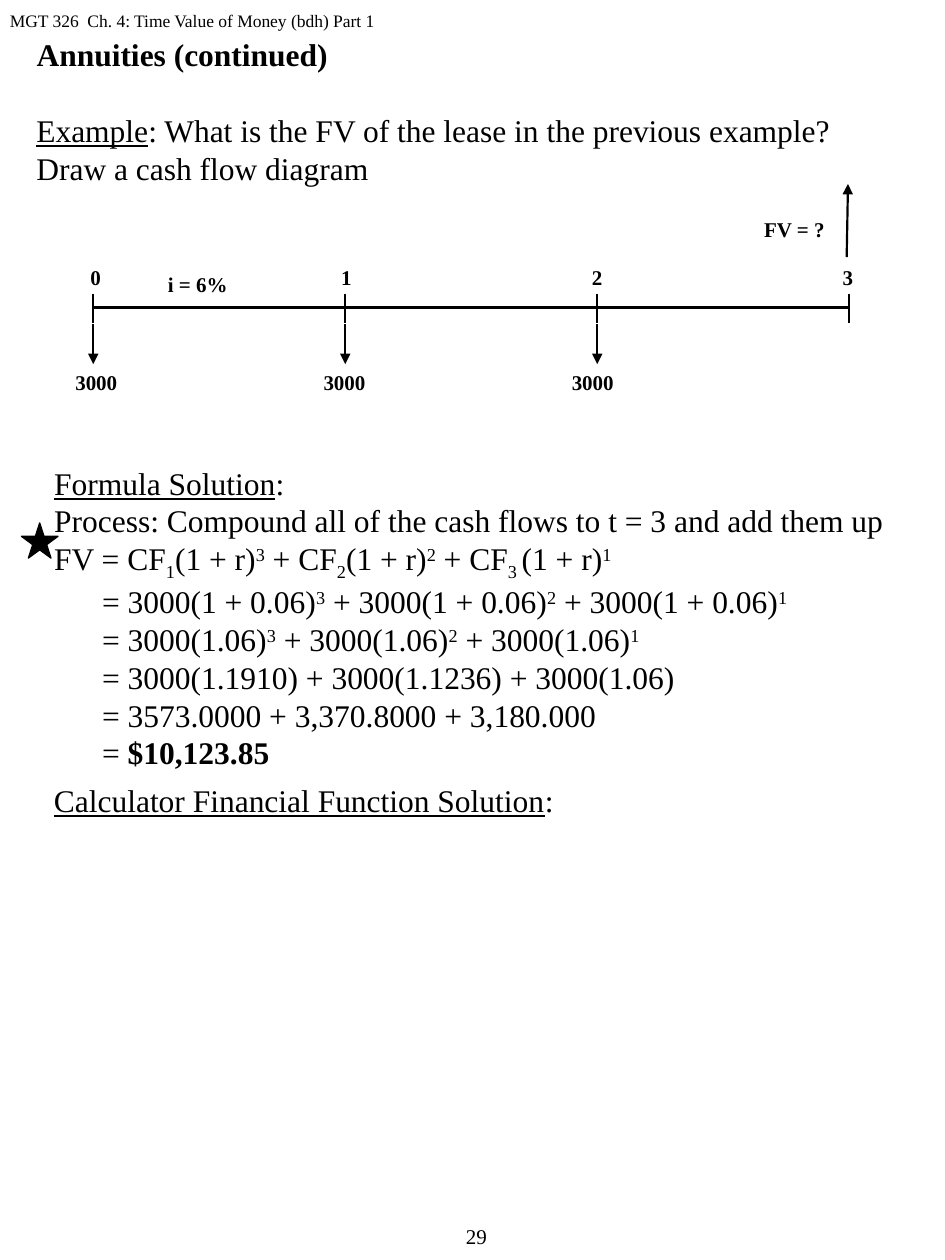
"""Build the slide on the future value of an annuity, with its cash flow diagram."""
from dataclasses import dataclass, field

from lxml import etree
from pptx import Presentation
from pptx.dml.color import RGBColor
from pptx.enum.shapes import MSO_CONNECTOR, MSO_SHAPE
from pptx.enum.text import MSO_ANCHOR, MSO_AUTO_SIZE, PP_ALIGN
from pptx.oxml.ns import qn
from pptx.util import Inches, Pt

LEFT, CENTER = PP_ALIGN.LEFT, PP_ALIGN.CENTER
TOP = MSO_ANCHOR.TOP
NO_AUTOSIZE = MSO_AUTO_SIZE.NONE
STRAIGHT = MSO_CONNECTOR.STRAIGHT
STAR = MSO_SHAPE.STAR_5_POINT
SUB, SUP = -25, 30


@dataclass(frozen=True)
class Theme:
    font: str = "Times New Roman"
    ink: RGBColor = field(default_factory=lambda: RGBColor(0, 0, 0))
    header: int = 10
    label: int = 12
    body: int = 18
    line: float = 1.25
    outline: float = 0.75


@dataclass(frozen=True)
class Run:
    text: str
    bold: bool = False
    underline: bool = False
    baseline: int = 0


@dataclass(frozen=True)
class Para:
    runs: list[Run]
    indent: float = 0


@dataclass(frozen=True)
class Box:
    left: float
    top: float
    width: float
    height: float

    def emu(self) -> list[int]:
        return [Inches(v) for v in (self.left, self.top, self.width, self.height)]


THEME = Theme()


def heading(text: str) -> list[Run]:
    return [Run(text, underline=True), Run(":")]


def power_sum(base: str) -> list[Run]:
    runs = []
    for n, lead in ((3, "= "), (2, " + "), (1, " + ")):
        runs += [Run(f"{lead}3000({base})"), Run(str(n), baseline=SUP)]
    return runs


def general_formula() -> list[Run]:
    runs = []
    for lead, index, power in (("FV = ", "1", "3"), (" + ", "2", "2"), (" + ", "3 ", "1")):
        runs += [Run(f"{lead}CF"), Run(index, baseline=SUB),
                 Run("(1 + r)"), Run(power, baseline=SUP)]
    return runs


def write(sp, paras: list[Para], size: int, align=LEFT, wrap: bool = True) -> None:
    tf = sp.text_frame
    tf.word_wrap = wrap
    tf.auto_size = NO_AUTOSIZE
    tf.vertical_anchor = TOP
    for i, para in enumerate(paras):
        p = tf.paragraphs[0] if i == 0 else tf.add_paragraph()
        p.alignment = align
        p.space_before = p.space_after = Pt(0)
        pPr = p._p.get_or_add_pPr()
        pPr.set("marL", str(Inches(para.indent)))
        pPr.set("indent", "0")
        etree.SubElement(pPr, qn("a:buNone"))
        for run in para.runs:
            r = p.add_run()
            r.text = run.text
            r.font.name = THEME.font
            r.font.size = Pt(size)
            r.font.color.rgb = THEME.ink
            r.font.bold = run.bold
            r.font.underline = run.underline
            if run.baseline:
                r._r.get_or_add_rPr().set("baseline", str(run.baseline * 1000))


def add_text(s, box: Box, paras: list[Para], size: int, align=LEFT, wrap: bool = True) -> None:
    write(s.shapes.add_textbox(*box.emu()), paras, size, align, wrap)


def fill_placeholder(sp, box: Box, paras: list[Para]) -> None:
    sp.left, sp.top, sp.width, sp.height = box.emu()
    write(sp, paras, THEME.body)


def add_label(s, left: float, top: float, width: float, text: str) -> None:
    add_text(s, Box(left, top, width, 0.3), [Para([Run(text, bold=True)])],
             THEME.label, CENTER, wrap=False)


def add_line(s, x1: float, y1: float, x2: float, y2: float, arrow: bool = False) -> None:
    cx = s.shapes.add_connector(STRAIGHT, *(Inches(v) for v in (x1, y1, x2, y2)))
    cx.line.color.rgb = THEME.ink
    cx.line.width = Pt(THEME.line)
    if arrow:
        etree.SubElement(cx.line._get_or_add_ln(), qn("a:tailEnd"), type="triangle")
    etree.SubElement(cx._element.spPr, qn("a:effectLst"))


def add_star(s, box: Box) -> None:
    sp = s.shapes.add_shape(STAR, *box.emu())
    sp.shadow.inherit = False
    sp.fill.solid()
    sp.fill.fore_color.rgb = THEME.ink
    sp.line.color.rgb = THEME.ink
    sp.line.width = Pt(THEME.outline)


def draw_cash_flows(s) -> None:
    start, step, periods = 0.74, 2, 3
    add_line(s, start, 2.44, start + step * periods, 2.44)
    for t in range(periods + 1):
        x = start + step * t
        add_line(s, x, 2.33, x, 2.56)
        add_label(s, 0.62 + 1.99 * t, 2.05, 0.28, str(t))
        if t < periods:
            add_line(s, x, 2.57, x, 2.89, arrow=True)
            add_label(s, 0.5 + 1.97 * t, 2.88, 0.53, "3000")
    add_label(s, 1.23, 2.11, 0.68, "i = 6%")
    add_label(s, 5.96, 1.67, 0.69, "FV = ?")
    add_line(s, 6.72, 2.04, 6.73, 1.46, arrow=True)


def main() -> None:
    prs = Presentation()
    prs.slide_width, prs.slide_height = Inches(7.5), Inches(10)
    s = prs.slides.add_slide(prs.slide_layouts[1])

    fill_placeholder(s.shapes.title, Box(0.19, 0.23, 7.31, 0.4),
                     [Para([Run("Annuities (continued)", bold=True)])])
    indent = 0.38
    fill_placeholder(s.placeholders[1], Box(0.33, 3.63, 7.17, 2.5), [
        Para(heading("Formula Solution")),
        Para([Run("Process: Compound all of the cash flows to t = 3 and add them up")]),
        Para(general_formula()),
        Para(power_sum("1 + 0.06"), indent),
        Para(power_sum("1.06"), indent),
        Para([Run("= 3000(1.1910) + 3000(1.1236) + 3000(1.06)")], indent),
        Para([Run("= 3573.0000 + 3,370.8000 + 3,180.000")], indent),
        Para([Run("= "), Run("$10,123.85", bold=True)], indent),
    ])
    add_text(s, Box(-0.02, 0.03, 4.64, 0.3),
             [Para([Run("MGT 326  Ch. 4: Time Value of Money (bdh) Part 1")])], THEME.header)
    add_text(s, Box(0.19, 0.83, 7.31, 0.71), [
        Para([Run("Example", underline=True),
              Run(": What is the FV of the lease in the previous example?")]),
        Para([Run("Draw a cash flow diagram")]),
    ], THEME.body)
    draw_cash_flows(s)
    add_star(s, Box(0.17, 4.15, 0.29, 0.28))
    add_text(s, Box(0.33, 6.15, 4.65, 0.4),
             [Para(heading("Calculator Financial Function Solution"))], THEME.body)
    add_text(s, Box(3.19, 9.66, 1.18, 0.32), [Para([Run("29")])], THEME.label, CENTER)
    prs.save("out.pptx")


if __name__ == "__main__":
    main()
